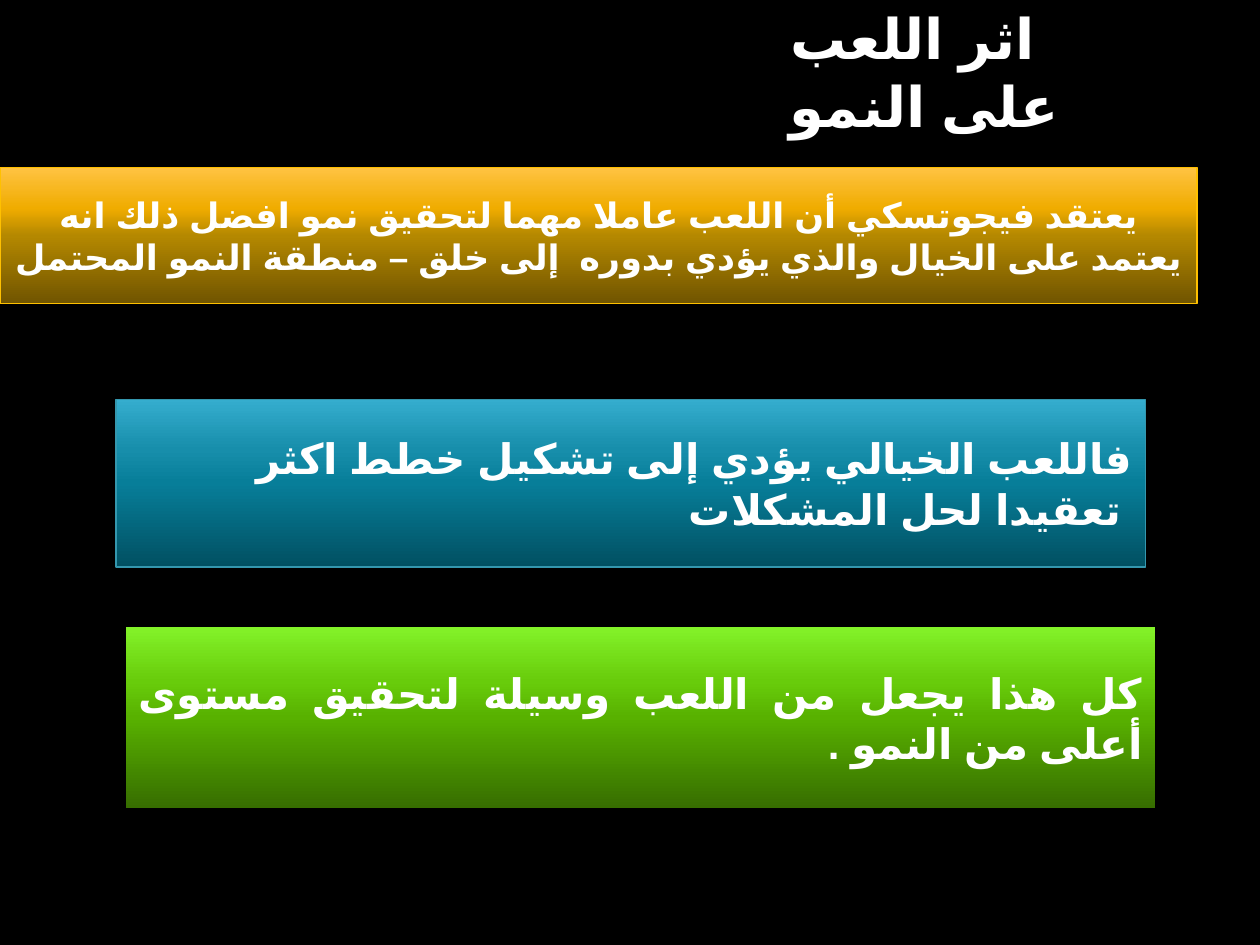
from lxml import etree
from pptx import Presentation
from pptx.dml.color import RGBColor
from pptx.enum import lang, shapes, text
from pptx.oxml import ns
from pptx.util import Inches, Pt

BLACK = RGBColor(0x00, 0x00, 0x00)
WHITE = RGBColor(0xFF, 0xFF, 0xFF)
TEAL_LINE = RGBColor(0x34, 0x97, 0xAE)
GOLD_LINE = RGBColor(0xFF, 0xC0, 0x00)
TEALS = [RGBColor.from_string(c) for c in ("015062", "077E99", "178EAB", "35ADCE")]
GREENS = [RGBColor.from_string(c) for c in ("376E00", "58B100", "68CC0B", "83F229")]
GOLDS = [RGBColor.from_string(c) for c in ("705400", "B48800", "F0AC00", "FFC342")]
STOPS = (0, 50, 70, 100)
RIGHT, JUSTIFY, CENTER = (
    text.PP_ALIGN.RIGHT, text.PP_ALIGN.JUSTIFY, text.PP_ALIGN.CENTER)


def write(shape, words, size, align):
    frame = shape.text_frame
    layout = {"word_wrap": True, "auto_size": text.MSO_AUTO_SIZE.NONE,
              "vertical_anchor": text.MSO_ANCHOR.MIDDLE}
    for name, value in layout.items():
        setattr(frame, name, value)
    para = frame.paragraphs[0]
    para.alignment = align
    span = para.add_run()
    span.text = words
    style = {"name": "Arial", "size": Pt(size), "bold": True,
             "language_id": lang.MSO_LANGUAGE_ID.ARABIC_IRAQ}
    for name, value in style.items():
        setattr(span.font, name, value)
    span.font.color.rgb = WHITE
    script_font = etree.SubElement(span.font._element, ns.qn("a:cs"))
    script_font.set("typeface", "Arial")
    return para


def shade(shape, colours):
    shape.fill.gradient()
    shape.fill.gradient_angle = 90
    stop_list = shape._element.spPr.find(ns.qn("a:gradFill")).find(ns.qn("a:gsLst"))
    for stop in list(stop_list):
        stop_list.remove(stop)
    for position, colour in zip(STOPS, colours):
        stop = etree.SubElement(stop_list, ns.qn("a:gs"), pos=str(position * 1000))
        etree.SubElement(stop, ns.qn("a:srgbClr"), val=str(colour))


deck = Presentation()
deck.slide_width, deck.slide_height = Inches(10), Inches(7.5)
page = deck.slides.add_slide(deck.slide_layouts[5])
page.background.fill.solid()
page.background.fill.fore_color.rgb = BLACK

title = page.shapes.title
place = {"left": 6.17, "top": 0.25, "width": 3.04, "height": 0.63}
for name, value in place.items():
    setattr(title, name, Inches(value))
write(title, "اثر اللعب على النمو", 32, text.PP_ALIGN.LEFT)

panels = [
    ((0.92, 3.17, 8.17, 1.33), TEALS, TEAL_LINE, 24, RIGHT, False,
     "فاللعب الخيالي يؤدي إلى تشكيل خطط اكثر تعقيدا لحل المشكلات "),
    ((1, 4.98, 8.17, 1.43), GREENS, None, 24, JUSTIFY, True,
     "كل هذا يجعل من اللعب وسيلة لتحقيق مستوى أعلى من النمو ."),
    ((0, 1.33, 9.5, 1.08), GOLDS, GOLD_LINE, 20, CENTER, False,
     "يعتقد فيجوتسكي أن اللعب عاملا مهما لتحقيق نمو افضل ذلك انه يعتمد على "
     "الخيال والذي يؤدي بدوره  إلى خلق – منطقة النمو المحتمل "),
]
for bounds, colours, outline, size, align, right_to_left, words in panels:
    box = page.shapes.add_shape(
        shapes.MSO_SHAPE.RECTANGLE, *[Inches(value) for value in bounds])
    box.shadow.inherit = False
    shade(box, colours)
    if outline is None:
        box.line.fill.background()
    else:
        box.line.color.rgb = outline
        box.line.width = Pt(0.75)
    para = write(box, words, size, align)
    if right_to_left:
        para._p.get_or_add_pPr().set("rtl", "1")

deck.save("out.pptx")
